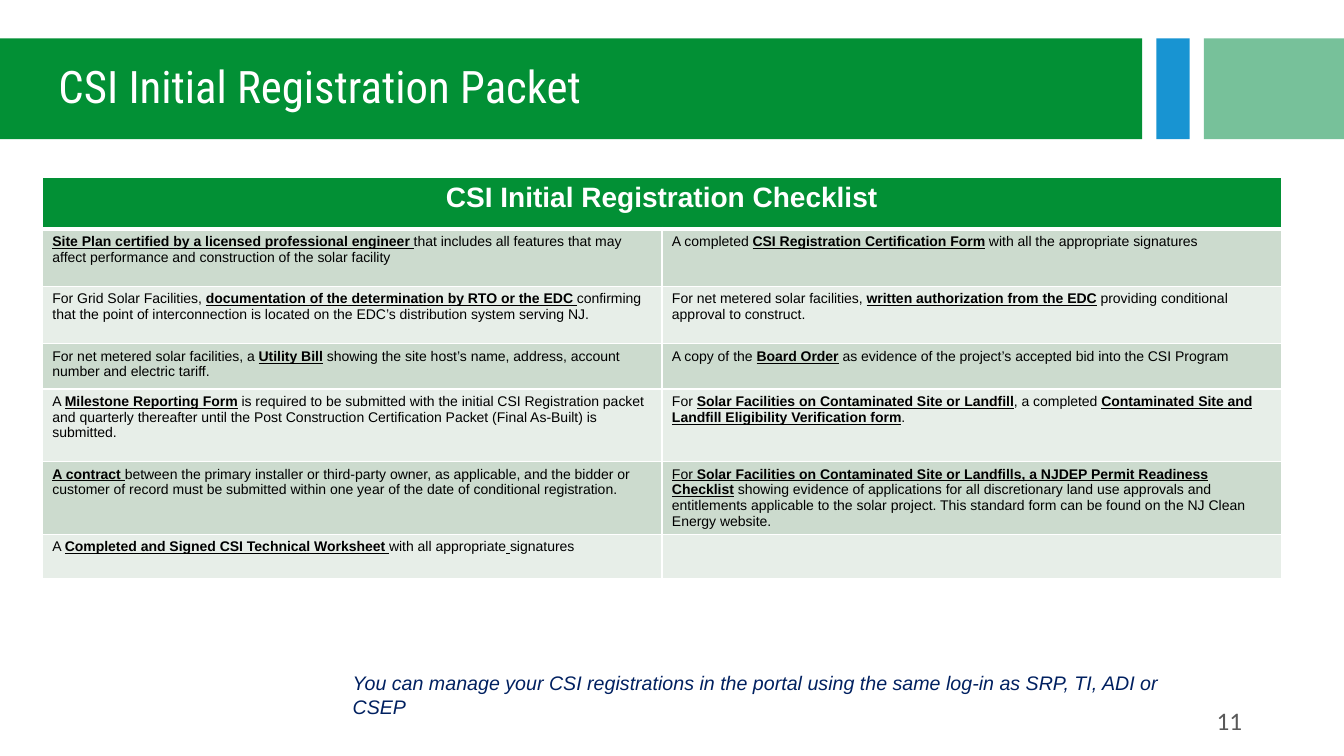
from dataclasses import dataclass

import pptx
import pptx.dml.color
import pptx.enum.shapes
import pptx.enum.text
import pptx.oxml
import pptx.oxml.ns
import pptx.util

RGB = pptx.dml.color.RGBColor
GREEN = RGB(0x02, 0x90, 0x35)
BLUE = RGB(0x18, 0x94, 0xD2)
PALE_GREEN = RGB(0x77, 0xC1, 0x9A)
BANDS = (RGB(0xCC, 0xDB, 0xCE), RGB(0xE7, 0xEE, 0xE8))
WHITE = RGB(0xFF, 0xFF, 0xFF)
BLACK = RGB(0x00, 0x00, 0x00)
GREY = RGB(0x59, 0x59, 0x59)
NAVY = RGB(0x00, 0x20, 0x60)

ALIGN = pptx.enum.text.PP_ALIGN
ANCHOR = pptx.enum.text.MSO_ANCHOR
WIDTH, HEIGHT = pptx.util.Inches(13.33), pptx.util.Inches(7.5)


def columns(n: float) -> int:
    """Width of n of the slide's 100 grid columns."""
    return round(WIDTH * n / 100)


def rows(n: float) -> int:
    """Height of n of the slide's 100 grid rows."""
    return round(HEIGHT * n / 100)


@dataclass(frozen=True)
class Area:
    left: float
    top: float
    width: float
    height: float

    def emu(self) -> tuple[int, int, int, int]:
        return columns(self.left), rows(self.top), columns(self.width), rows(self.height)


@dataclass(frozen=True)
class Style:
    size: float
    font: str
    color: RGB
    italic: bool = False


@dataclass(frozen=True)
class Part:
    text: str
    bold: bool = False
    underline: bool = False


@dataclass(frozen=True)
class Block:
    area: Area
    fill: RGB


@dataclass(frozen=True)
class Item:
    height: float
    left: tuple[Part, ...]
    right: tuple[Part, ...] = ()


def key(text: str) -> Part:
    return Part(text, bold=True, underline=True)


TITLE_BAND = Block(Area(-0.15, 5.07, 85.14, 13.33), GREEN)
ACCENTS = (
    Block(Area(86.04, 5.07, 2.48, 13.33), BLUE),
    Block(Area(89.57, 5.07, 10.43, 13.33), PALE_GREEN),
)
HEADER_HEIGHT = 6.8
CHECKLIST = (
    Item(7.6,
         (key("Site Plan certified by a licensed professional engineer "),
          Part("that includes all features that may affect performance and construction "
               "of the solar facility")),
         (Part("A completed "), key("CSI Registration Certification Form"),
          Part(" with all the appropriate signatures"))),
    Item(7.6,
         (Part("For Grid Solar Facilities, "),
          key("documentation of the determination by RTO or the EDC "),
          Part("confirming that the point of interconnection is located on the EDC’s "
               "distribution system serving NJ.")),
         (Part("For net metered solar facilities, "), key("written authorization from the EDC"),
          Part(" providing conditional approval to construct."))),
    Item(6,
         (Part("For net metered solar facilities, a "), key("Utility Bill"),
          Part(" showing the site host’s name, address, account number and electric tariff.")),
         (Part("A copy of the "), key("Board Order"),
          Part(" as evidence of the project’s accepted bid into the CSI Program"))),
    Item(9.6,
         (Part("A "), key("Milestone Reporting Form"),
          Part(" is required to be submitted with the initial CSI Registration packet and "
               "quarterly thereafter until the Post Construction Certification Packet "
               "(Final As-Built) is submitted.")),
         (Part("For "), key("Solar Facilities on Contaminated Site or Landfill"),
          Part(", a completed "),
          key("Contaminated Site and Landfill Eligibility Verification form"), Part("."))),
    Item(9.6,
         (key("A contract "),
          Part("between the primary installer or third-party owner, as applicable, and the "
               "bidder or customer of record must be submitted within one year of the date "
               "of conditional registration.")),
         (Part("For", underline=True),
          key(" Solar Facilities on Contaminated Site or Landfills, a NJDEP Permit "
              "Readiness Checklist"),
          Part(" showing evidence of applications for all discretionary land use approvals "
               "and entitlements applicable to the solar project. This standard form can be "
               "found on the NJ Clean Energy website."))),
    Item(5.9,
         (Part("A "), key("Completed and Signed CSI Technical Worksheet "),
          Part("with all appropriate"), key(" "), Part("signatures"))),
)


def write(tf, parts: tuple[Part, ...], style: Style, align=ALIGN.LEFT) -> None:
    p = tf.paragraphs[0]
    p.alignment = align
    p.font.size = pptx.util.Pt(style.size)
    for part in parts:
        r = p.add_run()
        r.text = part.text
        r.font.name, r.font.size = style.font, pptx.util.Pt(style.size)
        r.font.color.rgb, r.font.italic = style.color, style.italic
        r.font.bold, r.font.underline = part.bold, part.underline


def add_block(s, block: Block):
    sp = s.shapes.add_shape(pptx.enum.shapes.MSO_SHAPE.RECTANGLE, *block.area.emu())
    sp.shadow.inherit = False
    sp.fill.solid()
    sp.fill.fore_color.rgb = block.fill
    sp.line.fill.background()
    return sp


def add_text(s, area: Area, text: str, style: Style, align=ALIGN.LEFT):
    tf = s.shapes.add_textbox(*area.emu()).text_frame
    tf.word_wrap = True
    write(tf, (Part(text),), style, align)
    return tf


def paint_cell(cell, fill: RGB, bottom: float = 1) -> None:
    """Fill the cell and give it white borders, the bottom one of its own width."""
    tc_pr = cell._tc.get_or_add_tcPr()
    for side, points in (("L", 1), ("R", 1), ("T", 1), ("B", bottom)):
        tc_pr.append(pptx.oxml.parse_xml(
            f'<a:ln{side} {pptx.oxml.ns.nsdecls("a")} w="{pptx.util.Pt(points)}">'
            f'<a:solidFill><a:srgbClr val="{WHITE}"/></a:solidFill></a:ln{side}>'))
    cell.fill.solid()
    cell.fill.fore_color.rgb = fill


def add_checklist(s) -> None:
    heights = (HEADER_HEIGHT, *(item.height for item in CHECKLIST))
    area = Area(3.15, 23.47, 92.2, sum(heights))
    table = s.shapes.add_table(len(heights), 2, *area.emu()).table
    table.first_row = table.horz_banding = False
    for row, height in zip(table.rows, heights):
        row.height = rows(height)

    header = table.cell(0, 0)
    header.merge(table.cell(0, 1))
    for cell in table.rows[0].cells:
        paint_cell(cell, GREEN, bottom=3)
    write(header.text_frame, (Part("CSI Initial Registration Checklist", bold=True),),
          Style(20, "Arial", WHITE), ALIGN.CENTER)

    for i, item in enumerate(CHECKLIST):
        for cell, parts in zip(table.rows[i + 1].cells, (item.left, item.right)):
            paint_cell(cell, BANDS[i % 2])
            write(cell.text_frame, parts, Style(10, "Arial", BLACK))


def main() -> None:
    prs = pptx.Presentation()
    prs.slide_width, prs.slide_height = WIDTH, HEIGHT
    s = prs.slides.add_slide(prs.slide_layouts[6])

    for accent in ACCENTS:
        add_block(s, accent)
    tf = add_block(s, TITLE_BAND).text_frame
    tf.margin_left = columns(4.5)
    tf.vertical_anchor = ANCHOR.MIDDLE
    write(tf, (Part("CSI Initial Registration Packet"),), Style(32, "Roboto Condensed", WHITE))
    tf.paragraphs[0].line_spacing = 0.9

    add_checklist(s)
    add_text(s, Area(25.5, 88.13, 65.2, 4.53),
             "You can manage your CSI registrations in the portal using the same log-in as "
             "SRP, TI, ADI or CSEP", Style(14, "Arial", NAVY, italic=True))
    tf = add_text(s, Area(70.67, 92.67, 22.5, 5.33), "11", Style(18, "Calibri", GREY), ALIGN.RIGHT)
    tf.vertical_anchor = ANCHOR.MIDDLE
    prs.save("out.pptx")


if __name__ == "__main__":
    main()
